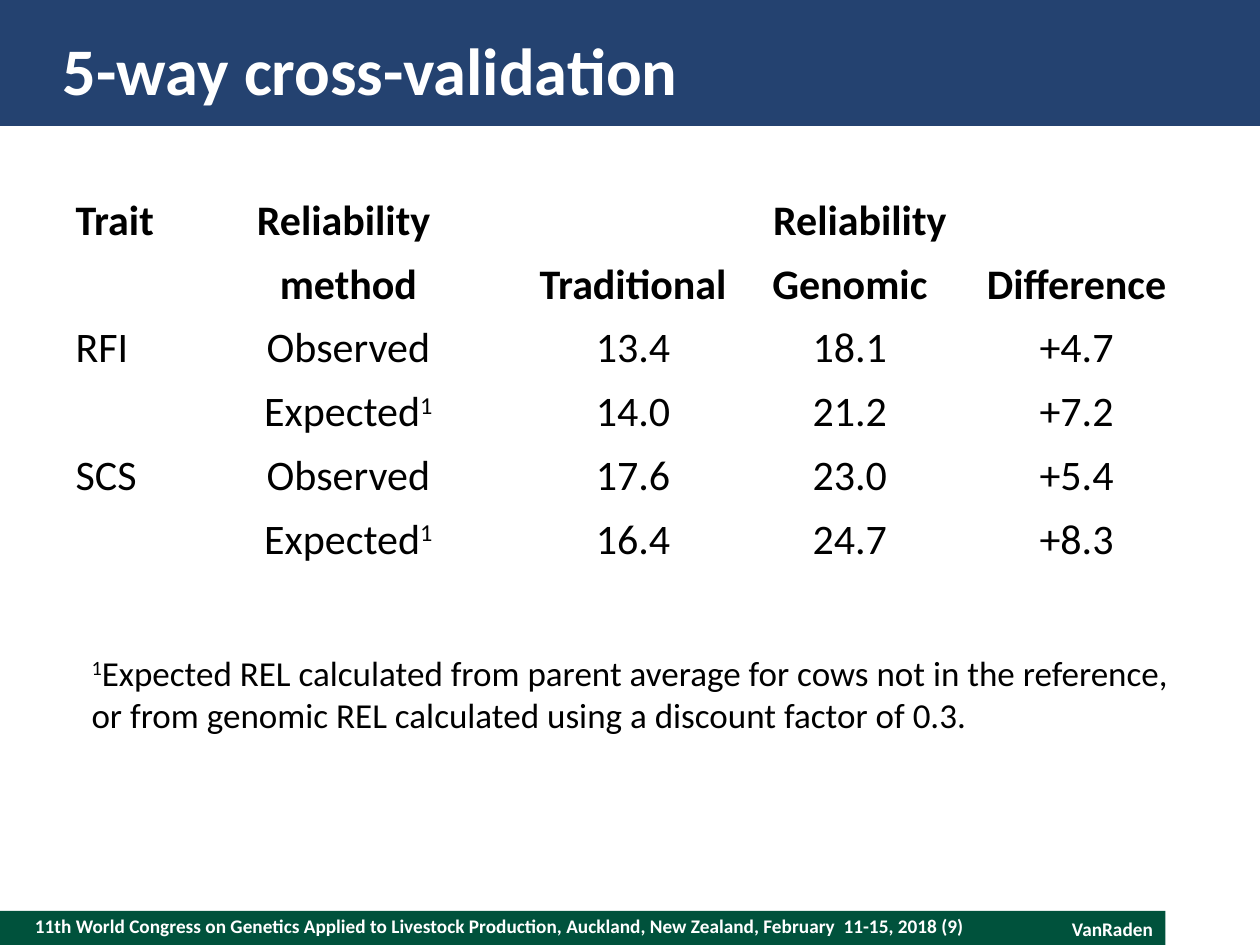
from dataclasses import dataclass

from pptx import Presentation
from pptx.enum import shapes, text
from pptx.util import Pt

COLORS = {"navy": "244270", "green": "00523C", "white": "FFFFFF", "black": "000000"}
FONT = "Calibri"
LEFT, CENTER, RIGHT = text.PP_ALIGN.LEFT, text.PP_ALIGN.CENTER, text.PP_ALIGN.RIGHT
TOP, MIDDLE = text.MSO_ANCHOR.TOP, text.MSO_ANCHOR.MIDDLE


@dataclass
class Box:
    left: float
    top: float
    width: float
    height: float

    def emu(self) -> tuple:
        return Pt(self.left), Pt(self.top), Pt(self.width), Pt(self.height)


@dataclass
class Band:
    box: Box
    color: str


@dataclass
class Label:
    box: Box
    lines: list[str]
    size: float
    color: str = "white"
    bold: bool = True
    align: int = LEFT
    anchor: int = MIDDLE
    inset: tuple = (0, 0)


BANDS = [
    Band(Box(0, 520.5, 666, 19.5), "green"),
    Band(Box(0, 0, 720, 72), "navy"),
]
LABELS = [
    Label(Box(20, 518.5, 554.5, 21.5),
          ["11th World Congress on Genetics Applied to Livestock Production, "
           "Auckland, New Zealand, February  11-15, 2018 (9)"], 11),
    Label(Box(522, 520.5, 144, 20.5), ["VanRaden"], 11,
          align=RIGHT, anchor=TOP, inset=(7.2, 3.6)),
    Label(Box(36, 14.4, 648, 50.4), ["5-way cross-validation"], 38),
    Label(Box(45.2, 368.7, 641, 55.7),
          ["^1^Expected REL calculated from parent average for cows not in the reference,",
           "or from genomic REL calculated using a discount factor of 0.3."],
          20, "black", False, anchor=TOP, inset=(7.2, 3.6)),
]
TABLE_BOX = Box(36, 108, 648, 219)
COLUMNS = [63.4, 199.4, 126, 121.7, 137.5]
HEADER_ROWS = 2
ROWS = [
    ["Trait", "Reliability ", "Reliability", "", ""],
    ["", "method", "Traditional", "Genomic", "Difference"],
    ["RFI", "Observed", "13.4", "18.1", "+4.7"],
    ["", "Expected^1^", "14.0", "21.2", "+7.2"],
    ["SCS", "Observed", "17.6", "23.0", "+5.4"],
    ["", "Expected^1^", "16.4", "24.7", "+8.3"],
]


def write_paragraph(p, content: str, size: float, color: str, bold: bool, align: int) -> None:
    p.alignment = align
    p.font.size = Pt(size)
    for i, part in enumerate(content.split("^")):
        if not part:
            continue
        r = p.add_run()
        r.text = part
        r.font.name = FONT
        r.font.size = Pt(size)
        r.font.bold = bold
        r.font.color.rgb = r.font.color.rgb = rgb(color)
        if i % 2:
            r.font._element.set("baseline", "30000")


def rgb(name: str):
    from pptx.dml.color import RGBColor
    return RGBColor.from_string(COLORS[name])


def draw_band(s, band: Band) -> None:
    sp = s.shapes.add_shape(shapes.MSO_SHAPE.RECTANGLE, *band.box.emu())
    sp.shadow.inherit = False
    sp.fill.solid()
    sp.fill.fore_color.rgb = rgb(band.color)
    sp.line.fill.background()


def draw_label(s, label: Label) -> None:
    tf = s.shapes.add_textbox(*label.box.emu()).text_frame
    tf.word_wrap = True
    tf.vertical_anchor = label.anchor
    tf.margin_left = tf.margin_right = Pt(label.inset[0])
    tf.margin_top = tf.margin_bottom = Pt(label.inset[1])
    for i, line in enumerate(label.lines):
        p = tf.add_paragraph() if i else tf.paragraphs[0]
        write_paragraph(p, line, label.size, label.color, label.bold, label.align)


def draw_table(s, box: Box, rows: list[list[str]]) -> None:
    table = s.shapes.add_table(len(rows), len(COLUMNS), *box.emu()).table
    table.first_row = table.horz_banding = False
    for column, width in zip(table.columns, COLUMNS):
        column.width = Pt(width)
    for i, row in enumerate(rows):
        for j, content in enumerate(row):
            cell = table.cell(i, j)
            cell.fill.background()
            write_paragraph(cell.text_frame.paragraphs[0], content, 24, "black",
                            i < HEADER_ROWS, CENTER if j else LEFT)
    table.cell(0, 2).merge(table.cell(0, 4))


def main() -> None:
    prs = Presentation()
    prs.slide_width, prs.slide_height = Pt(720), Pt(540)
    s = prs.slides.add_slide(prs.slide_layouts[6])
    for band in BANDS:
        draw_band(s, band)
    for label in LABELS:
        draw_label(s, label)
    draw_table(s, TABLE_BOX, ROWS)
    prs.save("out.pptx")


if __name__ == "__main__":
    main()
